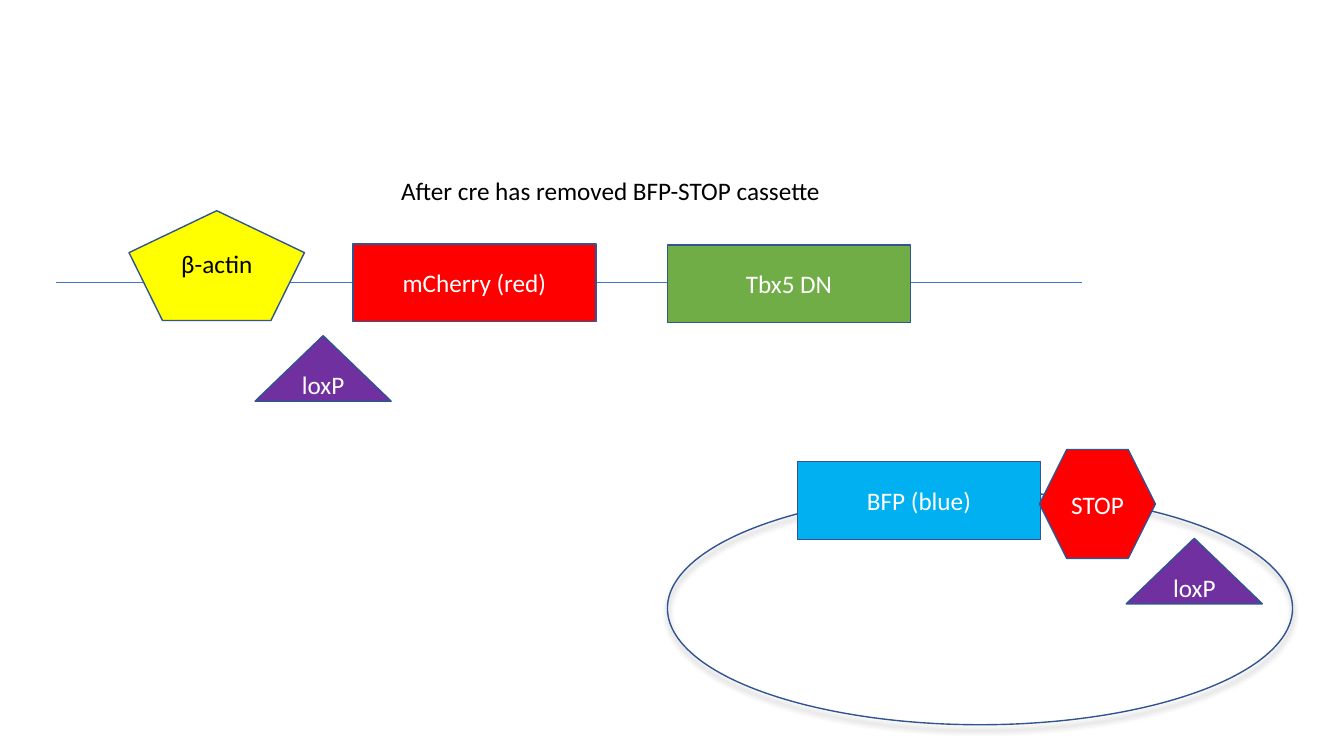
from lxml import etree
from pptx import Presentation
from pptx.dml.color import RGBColor
from pptx.enum.shapes import MSO_CONNECTOR, MSO_SHAPE
from pptx.enum.text import MSO_ANCHOR, MSO_AUTO_SIZE, PP_ALIGN
from pptx.oxml import parse_xml
from pptx.oxml.ns import nsdecls, qn
from pptx.util import Inches, Pt

LINE = MSO_CONNECTOR.STRAIGHT
RECT = MSO_SHAPE.RECTANGLE
PENTA = MSO_SHAPE.REGULAR_PENTAGON
HEXA = MSO_SHAPE.HEXAGON
TRI = MSO_SHAPE.ISOSCELES_TRIANGLE
OVAL = MSO_SHAPE.OVAL
MIDDLE = MSO_ANCHOR.MIDDLE
CENTER = PP_ALIGN.CENTER

COLORS = {
    "axis": "4472C4", "edge": "325491", "black": "000000", "white": "FFFFFF",
    "yellow": "FFFF00", "red": "FF0000", "green": "70AD47",
    "purple": "7030A0", "blue": "00B0F0",
}
GENE = (2.41, 0.77)
LOX = (1.35, 0.65)


def color(name):
    return RGBColor.from_string(COLORS[name])


def write(frame, text, ink):
    run = frame.paragraphs[0].add_run()
    run.text = text
    run.font.name = "Calibri"
    run.font.size = Pt(18)
    run.font.color.rgb = color(ink)


def add_part(slide, kind, x, y, size, fill=None, text="", ink="white"):
    """Add an outlined shape, filled and labelled if asked."""
    part = slide.shapes.add_shape(kind, Inches(x), Inches(y), *map(Inches, size))
    part.shadow.inherit = False
    part.line.color.rgb = color("edge")
    part.line.width = Pt(1)
    if fill:
        part.fill.solid()
        part.fill.fore_color.rgb = color(fill)
    else:
        part.fill.background()
    if text:
        frame = part.text_frame
        frame.vertical_anchor = MIDDLE
        frame.paragraphs[0].alignment = CENTER
        write(frame, text, ink)
    return part


def add_lox(slide, x, y):
    add_part(slide, TRI, x, y, LOX, "purple", "loxP")


def add_axis(slide, x, y, width):
    axis = slide.shapes.add_connector(
        LINE, Inches(x), Inches(y), Inches(x + width), Inches(y))
    axis.line.color.rgb = color("axis")
    axis.line.width = Pt(0.5)
    etree.SubElement(axis._element.spPr, qn("a:effectLst"))


def add_title(slide, x, y, width, height):
    box = slide.shapes.add_textbox(*map(Inches, (x, y, width, height)))
    frame = box.text_frame
    frame.word_wrap = False
    frame.auto_size = MSO_AUTO_SIZE.SHAPE_TO_FIT_TEXT
    write(frame, "After cre has removed BFP-STOP cassette", "black")


def add_shade(part):
    """Give a shape a soft shadow straight below it."""
    effects = part._element.spPr.find(qn("a:effectLst"))
    effects.append(parse_xml(
        f'<a:outerShdw {nsdecls("a")} blurRad="{Pt(4)}" dist="{Pt(3)}" '
        'dir="5400000" rotWithShape="0">'
        f'<a:srgbClr val="{COLORS["black"]}"><a:alpha val="40000"/></a:srgbClr>'
        '</a:outerShdw>'))


def add_strand(slide, x, y, width):
    """Draw the linear construct with its axis starting at x, y."""
    add_axis(slide, x, y, width)
    actin = add_part(slide, PENTA, x + 0.72, y - 0.71, (1.74, 1.09),
                     "yellow", "β-actin", "black")
    actin.text_frame.margin_bottom = Inches(0.35)
    add_part(slide, RECT, x + 2.94, y - 0.38, GENE, "red", "mCherry (red)")
    add_part(slide, RECT, x + 6.06, y - 0.37, GENE, "green", "Tbx5 DN")
    add_title(slide, x + 3.32, y - 1.11, 4.41, 0.4)
    add_lox(slide, x + 1.97, y + 0.53)


def add_loop(slide, x, y, width, height):
    """Draw the excised circle with the cassette on its upper rim."""
    add_shade(add_part(slide, OVAL, x, y, (width, height)))
    add_part(slide, RECT, x + 1.29, y - 0.3, GENE, "blue", "BFP (blue)")
    add_part(slide, HEXA, x + 3.69, y - 0.42, (1.15, 1.08), "red", "STOP")
    add_lox(slide, x + 4.55, y + 0.46)


def main():
    deck = Presentation()
    deck.slide_width = Inches(13.33)
    deck.slide_height = Inches(7.5)
    slide = deck.slides.add_slide(deck.slide_layouts[6])
    add_strand(slide, 0.56, 2.8, 10.17)
    add_loop(slide, 6.62, 4.88, 6.2, 2.31)
    deck.save("out.pptx")


if __name__ == "__main__":
    main()
